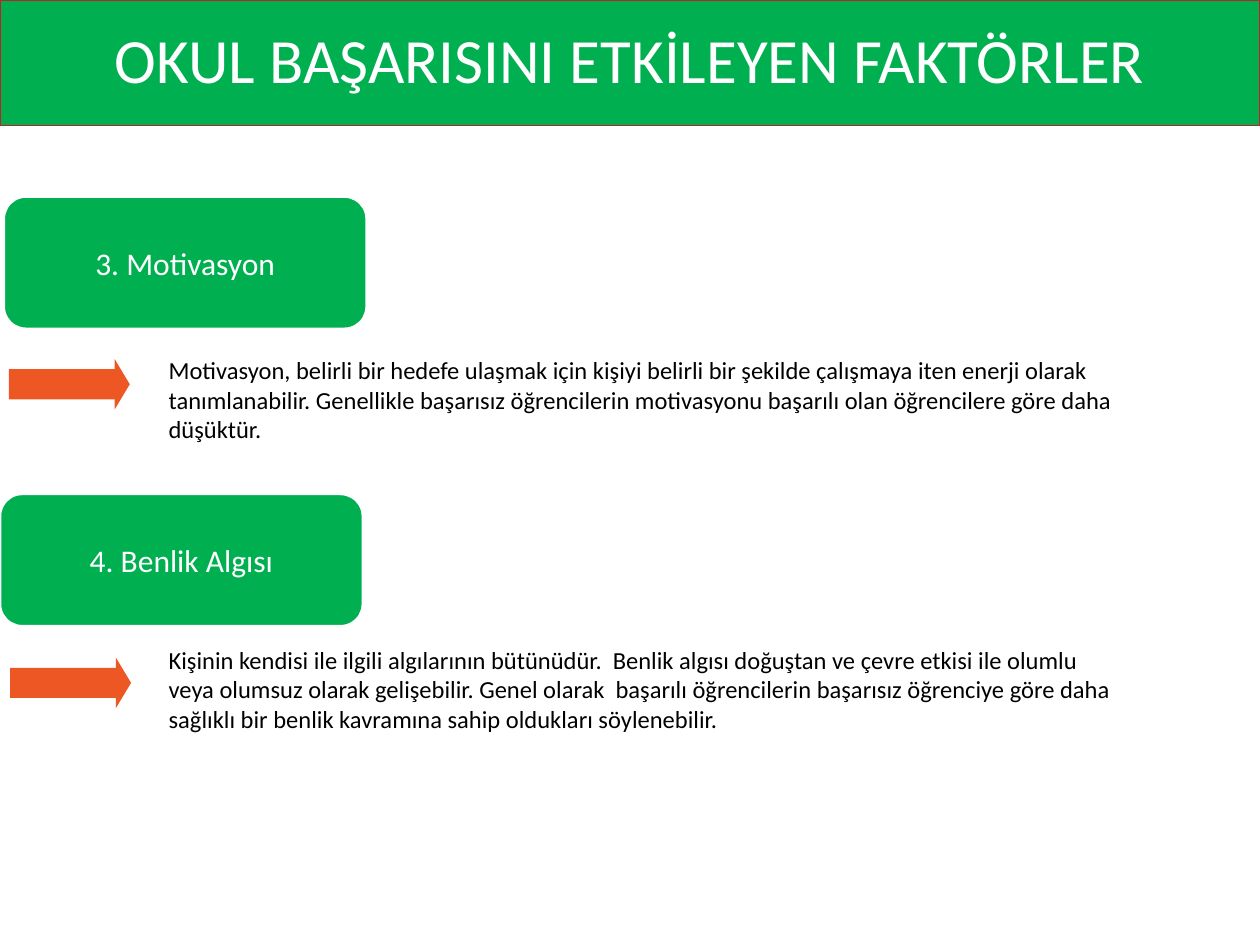
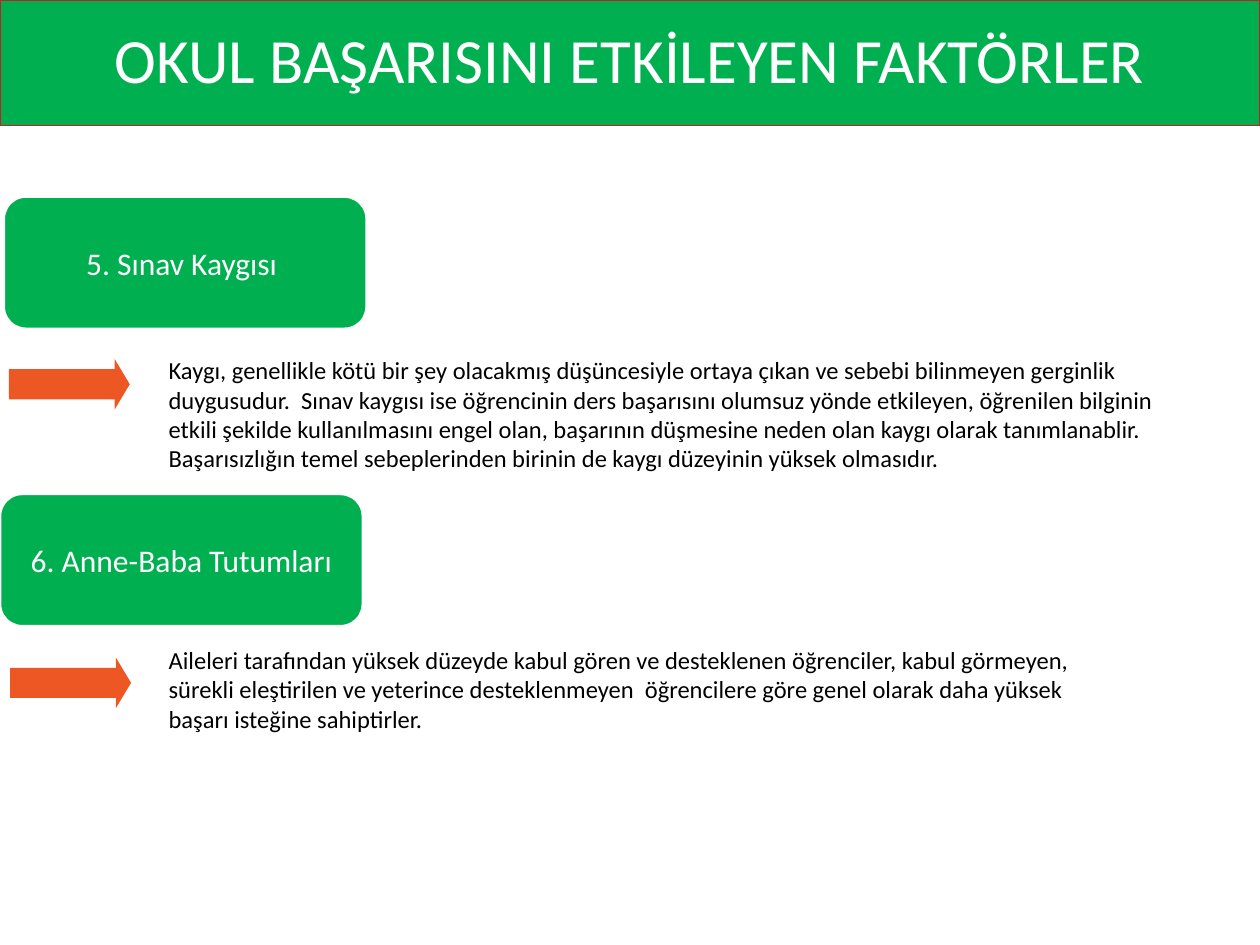
from dataclasses import dataclass

from pptx import Presentation
from pptx.dml.color import RGBColor
from pptx.enum.shapes import MSO_SHAPE
from pptx.enum.text import MSO_ANCHOR, MSO_AUTO_SIZE, PP_ALIGN
from pptx.util import Inches, Pt


@dataclass(frozen=True)
class Theme:
    green: RGBColor = RGBColor(0x00, 0xB0, 0x50)
    red: RGBColor = RGBColor(0xBB, 0x23, 0x26)
    orange: RGBColor = RGBColor(0xEC, 0x57, 0x24)
    white: RGBColor = RGBColor(0xFF, 0xFF, 0xFF)
    black: RGBColor = RGBColor(0x00, 0x00, 0x00)
    font: str = "Calibri"
    title_size: int = 36
    heading_size: int = 18
    body_size: int = 14


@dataclass(frozen=True)
class Section:
    """Place of one factor; arrow and text tops are measured from its top."""
    left: float
    top: float
    arrow_left: float
    arrow_top: float
    text_top: float
    text_width: float


THEME = Theme()
TITLE = "OKUL BAŞARISINI ETKİLEYEN FAKTÖRLER"
SECTIONS = (
    Section(0.03, 1.56, 0.07, 1.29, 1.21, 8.43),
    Section(0, 3.92, 0.08, 1.3, 1.15, 7.73),
)
TEXT_LEFT = 1.24

# Each slide holds two factors: heading and explanation
SLIDES = (
    (
        ("3. Motivasyon",
         "Motivasyon, belirli bir hedefe ulaşmak için kişiyi belirli bir şekilde "
         "çalışmaya iten enerji olarak tanımlanabilir. Genellikle başarısız "
         "öğrencilerin motivasyonu başarılı olan öğrencilere göre daha düşüktür."),
        ("4. Benlik Algısı",
         "Kişinin kendisi ile ilgili algılarının bütünüdür.  Benlik algısı doğuştan "
         "ve çevre etkisi ile olumlu veya olumsuz olarak gelişebilir. Genel olarak  "
         "başarılı öğrencilerin başarısız öğrenciye göre daha sağlıklı bir benlik "
         "kavramına sahip oldukları söylenebilir."),
    ),
    (
        ("5. Sınav Kaygısı ",
         "Kaygı, genellikle kötü bir şey olacakmış düşüncesiyle ortaya çıkan ve "
         "sebebi bilinmeyen gerginlik duygusudur.  Sınav kaygısı ise öğrencinin ders "
         "başarısını olumsuz yönde etkileyen, öğrenilen bilginin etkili şekilde "
         "kullanılmasını engel olan, başarının düşmesine neden olan kaygı olarak "
         "tanımlanablir. Başarısızlığın temel sebeplerinden birinin de kaygı "
         "düzeyinin yüksek olmasıdır."),
        ("6. Anne-Baba Tutumları",
         "Aileleri tarafından yüksek düzeyde kabul gören ve desteklenen öğrenciler, "
         "kabul görmeyen, sürekli eleştirilen ve yeterince desteklenmeyen  "
         "öğrencilere göre genel olarak daha yüksek başarı isteğine sahiptirler."),
    ),
)


def write(shape, text, size, color, alignment=PP_ALIGN.LEFT):
    frame = shape.text_frame
    frame.word_wrap = True
    paragraph = frame.paragraphs[0]
    paragraph.text = text
    paragraph.alignment = alignment
    paragraph.font.name = THEME.font
    paragraph.font.size = Pt(size)
    paragraph.font.color.rgb = color
    return paragraph


def paint(shape, fill, line=None, line_width=0):
    shape.shadow.inherit = False
    shape.fill.solid()
    shape.fill.fore_color.rgb = fill
    if line is None:
        shape.line.fill.background()
    else:
        shape.line.color.rgb = line
        shape.line.width = Pt(line_width)


def add_panel(slide, kind, box, text, size, line, line_width):
    """Green panel with centred white text."""
    panel = slide.shapes.add_shape(kind, *map(Inches, box))
    paint(panel, THEME.green, line, line_width)
    panel.text_frame.vertical_anchor = MSO_ANCHOR.MIDDLE
    return write(panel, text, size, THEME.white, PP_ALIGN.CENTER)


def add_title_band(slide):
    paragraph = add_panel(slide, MSO_SHAPE.RECTANGLE, (0, 0, 10, 1), TITLE,
                          THEME.title_size, THEME.red, 0.5)
    paragraph.line_spacing = 0.9


def add_arrow(slide, left, top):
    """Arrow grouped from a shaft and a triangular head."""
    shaft_width, shaft_height, head_width, head_height = 0.87, 0.24, 0.12, 0.4
    group = slide.shapes.add_group_shape()
    shaft_top = top + (head_height - shaft_height) / 2
    shaft = group.shapes.add_shape(
        MSO_SHAPE.RECTANGLE,
        *map(Inches, (left, shaft_top, shaft_width, shaft_height)))
    head_left = left + 0.84
    builder = group.shapes.build_freeform(Inches(head_left), Inches(top))
    builder.add_line_segments([
        (Inches(head_left + head_width), Inches(top + head_height / 2)),
        (Inches(head_left), Inches(top + head_height)),
    ], close=True)
    for part in (shaft, builder.convert_to_shape()):
        paint(part, THEME.orange)


def add_section(slide, section, heading, explanation):
    # Heading panel
    add_panel(slide, MSO_SHAPE.ROUNDED_RECTANGLE,
              (section.left, section.top, 2.88, 1.05), heading,
              THEME.heading_size, THEME.white, 1.5)
    # Arrow and explanation
    add_arrow(slide, section.arrow_left, section.top + section.arrow_top)
    text_box = slide.shapes.add_textbox(
        Inches(TEXT_LEFT), Inches(section.top + section.text_top),
        Inches(section.text_width), Inches(0.81))
    write(text_box, explanation, THEME.body_size, THEME.black)
    text_box.text_frame.auto_size = MSO_AUTO_SIZE.SHAPE_TO_FIT_TEXT


def add_factor_slide(presentation, factors):
    slide = presentation.slides.add_slide(presentation.slide_layouts[6])
    add_title_band(slide)
    for section, (heading, explanation) in zip(SECTIONS, factors):
        add_section(slide, section, heading, explanation)


def main():
    presentation = Presentation()
    presentation.slide_width = Inches(10)
    presentation.slide_height = Inches(7.5)
    for factors in SLIDES:
        add_factor_slide(presentation, factors)
    presentation.save("out.pptx")


if __name__ == "__main__":
    main()
